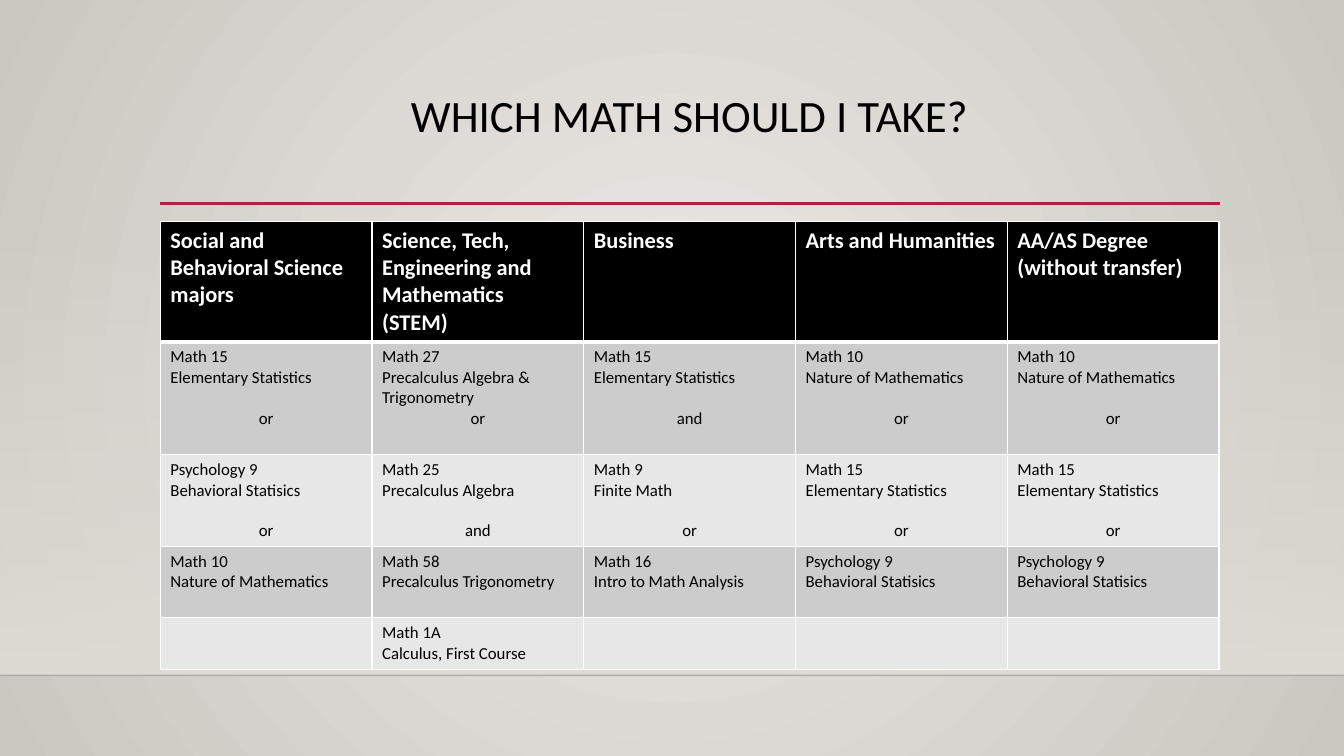
import pptx
import pptx.dml.color
import pptx.enum.shapes
import pptx.enum.text
import pptx.oxml
import pptx.oxml.ns
import pptx.util

TITLE = "WHICH MATH SHOULD I TAKE?"
HEADS = [
    "Social and Behavioral Science majors",
    "Science, Tech, Engineering and Mathematics (STEM)",
    "Business",
    "Arts and Humanities",
    "AA/AS Degree (without transfer)",
]
STATS = ("Math 15", "Elementary Statistics")
NATURE = ("Math 10", "Nature of Mathematics")
PSYCH = ("Psychology 9", "Behavioral Statisics")
# Each cell: course, course name, then the word that joins it to the next row
ROWS = [
    [(*STATS, "or"), ("Math 27", "Precalculus Algebra & Trigonometry", "or"),
     (*STATS, "and"), (*NATURE, "or"), (*NATURE, "or")],
    [(*PSYCH, "or"), ("Math 25", "Precalculus Algebra", "and"),
     ("Math 9", "Finite Math", "or"), (*STATS, "or"), (*STATS, "or")],
    [NATURE, ("Math 58", "Precalculus Trigonometry"),
     ("Math 16", "Intro to Math Analysis"), PSYCH, PSYCH],
    [(), ("Math 1A", "Calculus, First Course"), (), (), ()],
]
HIGHS = [1.19, 1.12, 0.91, 0.71, 0.51]
TIGHT = (1, 1)  # its name wraps, so no gap is left above the joining word

THEME = {
    "font": "Calibri", "title": 32, "head": 16, "body": 12, "gap": 14.6,
    "ink": "000000", "white": "FFFFFF", "bands": ["CCCCCC", "E7E7E7"],
    "back": ["ECEAE7", "CAC7C1"], "wall": "DFDBD5",
    "rule": "B71E42", "floor": "000001",
}
WIDE, HIGH = 13.33, 7.5
LEFT, SPAN = 1.59, 10.5
FLOOR = 6.7

Inches = pptx.util.Inches
Pt = pptx.util.Pt
qn = pptx.oxml.ns.qn
NS = pptx.oxml.ns.nsdecls("a")


def rgb(code):
    return pptx.dml.color.RGBColor.from_string(code)


def node(text):
    return pptx.oxml.parse_xml(text)


def fade(color, share):
    """Make a colour element see-through, share being its opacity in percent."""
    color.append(node(f'<a:alpha {NS} val="{share * 1000}"/>'))


def blend(fill, codes):
    fill.gradient()
    for stop, code in zip(fill.gradient_stops, codes):
        stop.color.rgb = rgb(code)


def write(para, text, size, ink, bold=False):
    run = para.add_run()
    run.text = text
    font = run.font
    font.name, font.size, font.bold = THEME["font"], Pt(size), bold
    font.color.rgb = rgb(ink)


def line(slide, start, end, top, code, width):
    rule = slide.shapes.add_connector(
        pptx.enum.shapes.MSO_CONNECTOR.STRAIGHT,
        Inches(start), Inches(top), Inches(end), Inches(top))
    rule.line.color.rgb = rgb(code)
    rule.line.width = Pt(width)
    rule._element.spPr.append(node(f"<a:effectLst {NS}/>"))
    return rule


def paint(cell, code, base):
    """Fill a cell and edge it in white, with a base line of the given width."""
    cell.fill.solid()
    cell.fill.fore_color.rgb = rgb(code)
    props = cell._tc.get_or_add_tcPr()
    for spot, (side, width) in enumerate(
            [("L", 1), ("R", 1), ("T", 1), ("B", base)]):
        props.insert(spot, node(
            f'<a:ln{side} {NS} w="{Pt(width)}"><a:solidFill>'
            f'<a:srgbClr val="{THEME["white"]}"/></a:solidFill></a:ln{side}>'))


def scene(slide):
    blend(slide.background.fill, THEME["back"])
    grad = next(slide._element.iter(qn("a:gradFill")))
    old = grad.find(qn("a:lin"))
    grad.replace(old, node(
        f'<a:path {NS} path="circle"><a:fillToRect l="50000" t="50000" '
        'r="50000" b="50000"/></a:path>'))

    wall = slide.shapes.add_shape(
        pptx.enum.shapes.MSO_SHAPE.RECTANGLE,
        0, Inches(2.21), Inches(WIDE), Inches(FLOOR - 2.21))
    wall.shadow.inherit = False
    wall.line.fill.background()
    blend(wall.fill, [THEME["wall"]] * 2)
    wall.fill.gradient_angle = 270
    fade(next(wall._element.spPr.iter(qn("a:srgbClr"))), 0)

    floor = line(slide, 0, WIDE, FLOOR, THEME["floor"], 1)
    fade(next(floor._element.spPr.iter(qn("a:srgbClr"))), 20)
    line(slide, LEFT, 12.1, 2.02, THEME["rule"], 2.5)


def heading(slide):
    box = slide.shapes.add_textbox(
        Inches(LEFT), Inches(0.88), Inches(SPAN), Inches(1.15))
    box.text_frame.word_wrap = True
    para = box.text_frame.paragraphs[0]
    para.alignment = pptx.enum.text.PP_ALIGN.CENTER
    para.line_spacing = 0.9
    write(para, TITLE, THEME["title"], THEME["ink"])


def course(cell, parts, gap):
    frame = cell.text_frame
    frame.paragraphs[0].font.size = Pt(THEME["body"])
    for spot, text in enumerate(parts):
        para = frame.add_paragraph() if spot else frame.paragraphs[0]
        if spot == 2:
            para.alignment = pptx.enum.text.PP_ALIGN.CENTER
            para.space_before = Pt(gap)
        write(para, text, THEME["body"], THEME["ink"])


def grid(slide):
    table = slide.shapes.add_table(
        len(HIGHS), len(HEADS), Inches(LEFT), Inches(2.2),
        Inches(SPAN), Inches(sum(HIGHS))).table
    for col in table.columns:
        col.width = Inches(SPAN / len(HEADS))
    for row, high in zip(table.rows, HIGHS):
        row.height = Inches(high)
    for c, text in enumerate(HEADS):
        cell = table.cell(0, c)
        paint(cell, THEME["ink"], 3)
        write(cell.text_frame.paragraphs[0], text,
              THEME["head"], THEME["white"], True)
    for r, row in enumerate(ROWS, 1):
        for c, parts in enumerate(row):
            cell = table.cell(r, c)
            paint(cell, THEME["bands"][(r - 1) % 2], 1)
            course(cell, parts, 0 if (r, c) == TIGHT else THEME["gap"])


def main():
    deck = pptx.Presentation()
    deck.slide_width, deck.slide_height = Inches(WIDE), Inches(HIGH)
    slide = deck.slides.add_slide(deck.slide_layouts[6])
    scene(slide)
    heading(slide)
    grid(slide)
    deck.save("out.pptx")


if __name__ == "__main__":
    main()
